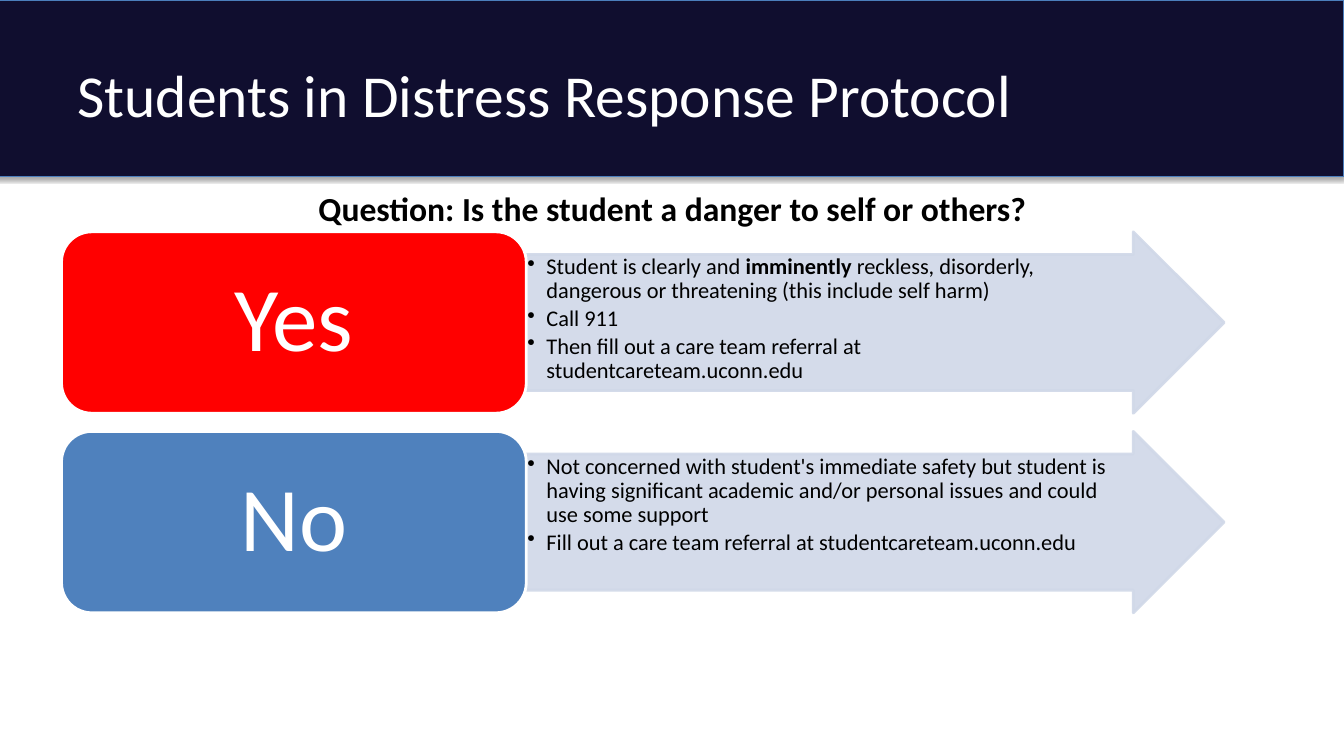
import dataclasses

import lxml.etree
import pptx
import pptx.dml.color
import pptx.enum.shapes
import pptx.enum.text
import pptx.oxml.ns
import pptx.util

Inches = pptx.util.Inches
Pt = pptx.util.Pt
RGBColor = pptx.dml.color.RGBColor
MSO_SHAPE = pptx.enum.shapes.MSO_SHAPE
PP_ALIGN = pptx.enum.text.PP_ALIGN
MSO_ANCHOR = pptx.enum.text.MSO_ANCHOR
qn = pptx.oxml.ns.qn


@dataclasses.dataclass
class Theme:
    font: str = "Calibri"
    navy: str = "100E2F"
    bar_line: str = "4B7EBC"
    white: str = "FFFFFF"
    black: str = "000000"
    red: str = "FF0000"
    blue: str = "4F81BD"
    pale: str = "D0D8E8"
    title_size: float = 42.5
    question_size: float = 24
    answer_size: float = 65
    step_size: float = 16


theme = Theme()


def add_box(kind, left, top, width, height, fill, line, line_width, alpha=None):
    sp = slide.shapes.add_shape(kind, Inches(left), Inches(top), Inches(width), Inches(height))
    sp.shadow.inherit = False
    sp.fill.solid()
    sp.fill.fore_color.rgb = RGBColor.from_string(fill)
    sp.line.color.rgb = RGBColor.from_string(line)
    sp.line.width = Pt(line_width)
    if alpha:
        for color in sp._element.spPr.iter(qn("a:srgbClr")):
            lxml.etree.SubElement(color, qn("a:alpha"), val=str(alpha * 1000))
    return sp


def write(sp, paragraphs, size, color, bold=False, align=PP_ALIGN.LEFT, anchor=MSO_ANCHOR.TOP,
          insets=(0.1, 0.05, 0.1, 0.05), spacing=None, after=0, bullet=False):
    """Each paragraph is a list of runs; every second run is bold."""
    tf = sp.text_frame
    tf.word_wrap = True
    tf.vertical_anchor = anchor
    tf.margin_left, tf.margin_top, tf.margin_right, tf.margin_bottom = map(Inches, insets)
    for i, runs in enumerate(paragraphs):
        p = tf.paragraphs[0] if i == 0 else tf.add_paragraph()
        p.alignment = align
        p.line_spacing = spacing
        p.space_after = Pt(after)
        if bullet:
            pPr = p._p.get_or_add_pPr()
            pPr.set("marL", str(Inches(0.19)))
            pPr.set("indent", str(Inches(-0.19)))
            lxml.etree.SubElement(pPr, qn("a:buChar"), char="•")
        for j, text in enumerate(runs):
            r = p.add_run()
            r.text = text
            r.font.name = theme.font
            r.font.size = Pt(size)
            r.font.bold = bold or j % 2 == 1
            r.font.color.rgb = RGBColor.from_string(color)


prs = pptx.Presentation()
prs.slide_width = Inches(13.33)
prs.slide_height = Inches(7.5)
slide = prs.slides.add_slide(prs.slide_layouts[6])

# Title bar with a soft shadow below it
bar = add_box(MSO_SHAPE.RECTANGLE, -0.05, 0, 13.38, 1.75, theme.navy, theme.bar_line, 0.75)
effects = bar._element.spPr.find(qn("a:effectLst"))
shadow = lxml.etree.SubElement(effects, qn("a:outerShdw"), blurRad=str(Pt(3.1)),
                               dist=str(Pt(1.8)), dir="5400000", rotWithShape="0")
shade = lxml.etree.SubElement(shadow, qn("a:srgbClr"), val=theme.black)
lxml.etree.SubElement(shade, qn("a:alpha"), val="35000")

# Title and question
title = slide.shapes.add_textbox(Inches(0.67), Inches(0.3), Inches(12), Inches(1.25))
write(title, [["Students in Distress Response Protocol"]], theme.title_size, theme.white,
      anchor=MSO_ANCHOR.MIDDLE)
question = slide.shapes.add_textbox(Inches(0.67), Inches(1.81), Inches(12), Inches(4.95))
write(question, [["Question: Is the student a danger to self or others?"]],
      theme.question_size, theme.black, bold=True, align=PP_ALIGN.CENTER)

# One row per answer: a label and an arrow listing the steps
answers = [
    ("Yes", theme.red, [
        ["Student is clearly and ", "imminently ",
         "reckless, disorderly, dangerous or threatening (this include self harm)"],
        ["Call 911"],
        ["Then fill out a care team referral at studentcareteam.uconn.edu"],
    ]),
    ("No", theme.blue, [
        ["Not concerned with student's immediate safety but student is having significant "
         "academic and/or personal issues and could use some support"],
        ["Fill out a care team referral at studentcareteam.uconn.edu"],
    ]),
]
for row, (answer, color, steps) in enumerate(answers):
    top = 2.3 + 1.98 * row
    arrow = add_box(MSO_SHAPE.RIGHT_ARROW, 5.22, top, 6.92, 1.8, theme.pale, theme.pale, 2, alpha=90)
    arrow.adjustments[0] = 0.75
    arrow.adjustments[1] = 0.5
    # The right inset keeps the text out of the arrowhead
    write(arrow, steps, theme.step_size, theme.black, insets=(0.01, 0.01, 0.46, 0.01),
          spacing=0.9, after=2.4, bullet=True)

    label = add_box(MSO_SHAPE.ROUNDED_RECTANGLE, 0.61, top, 4.61, 1.8, color, theme.white, 2)
    write(label, [[answer]], theme.answer_size, theme.white, align=PP_ALIGN.CENTER,
          anchor=MSO_ANCHOR.MIDDLE, insets=(0.27, 0.14, 0.27, 0.14), spacing=0.9)

prs.save("out.pptx")
